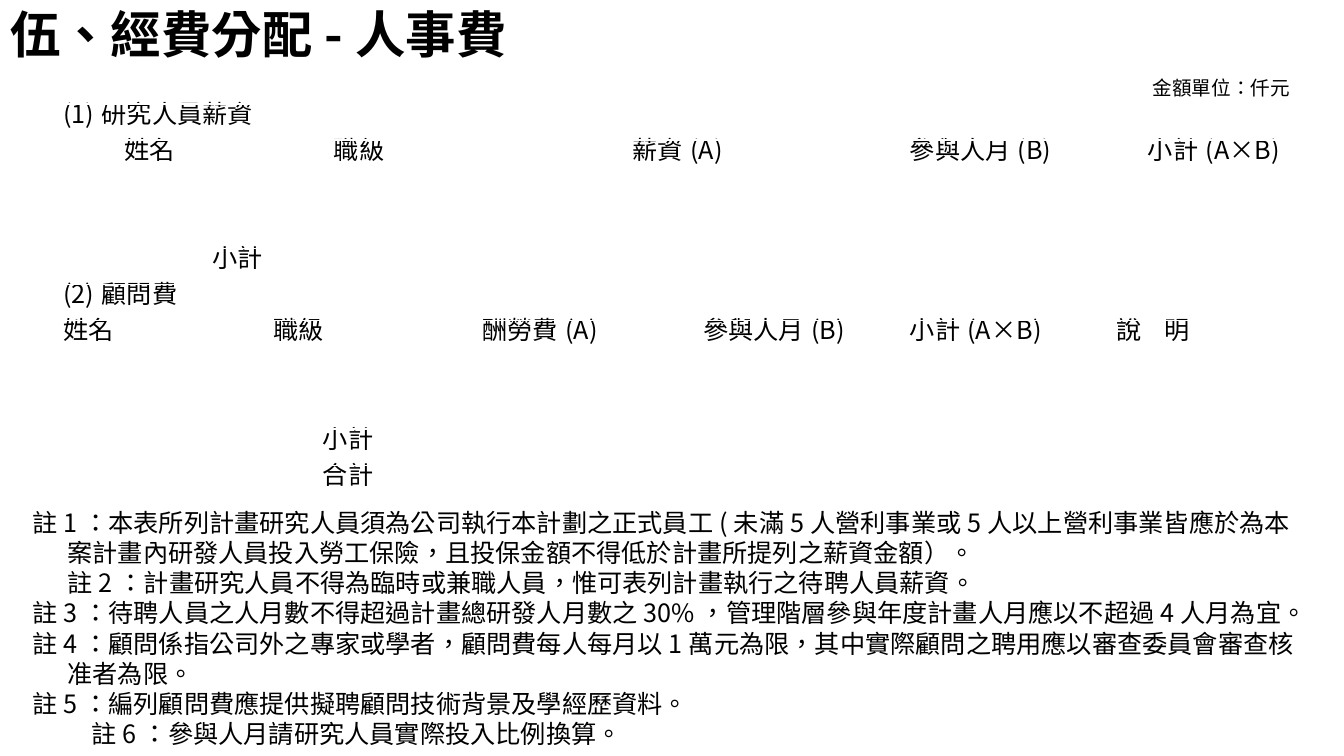
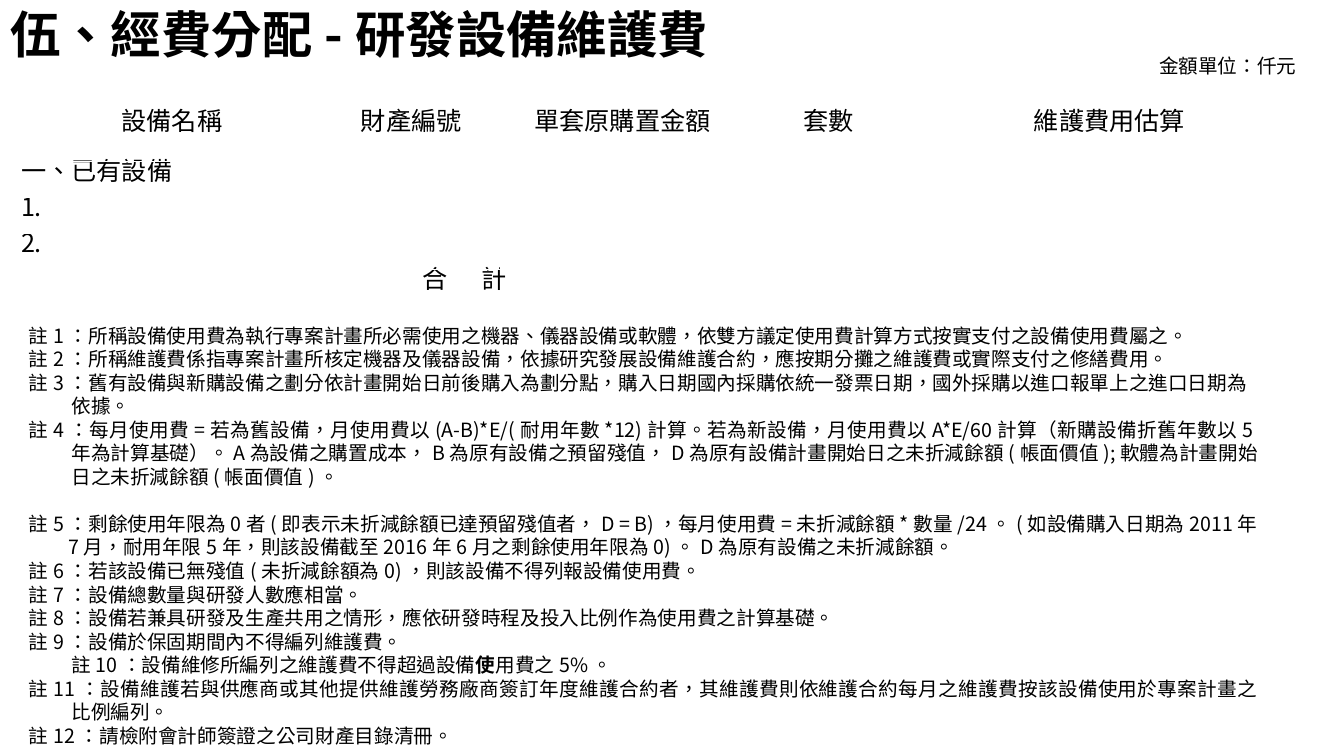
from dataclasses import dataclass

from pptx import Presentation
from pptx.dml.color import RGBColor
from pptx.enum.lang import MSO_LANGUAGE_ID as Language
from pptx.enum.text import MSO_ANCHOR as Anchor, MSO_AUTO_SIZE as AutoSize, PP_ALIGN as Align
from pptx.oxml.ns import qn
from pptx.util import Cm, Pt


@dataclass
class Span:
    """Piece of text with its own weight or letter spacing in points."""
    text: str
    bold: bool = False
    gap: int = 0


@dataclass
class Form:
    """Paragraph layout, with indents in cm and spacing in points."""
    align: Align = Align.LEFT
    indent: float = 0
    hang: float = 0
    before: float = 0


class Budget:
    """Style of the budget deck and the slide being filled."""
    colours = {"text": "000000", "page": "FFFFFF"}
    font = "Noto Sans CJK SC"
    row_height = 0.91

    def __init__(self):
        """Start an empty widescreen deck."""
        self.deck = Presentation()
        self.deck.slide_width, self.deck.slide_height = Cm(33.87), Cm(19.05)
        self.page = None

    def fill_para(self, para, spans, size, form=Form(), bold=False):
        """Format a paragraph and add its text run by run."""
        para.alignment = form.align
        properties = para._p.get_or_add_pPr()
        properties.set("marL", str(Cm(form.indent)))
        properties.set("indent", str(-Cm(form.hang)))
        para.space_before = Pt(form.before)
        for span in [Span(spans, bold)] if isinstance(spans, str) else spans:
            run = para.add_run()
            run.text = span.text
            font = run.font
            font.name, font.size, font.bold = self.font, Pt(size), span.bold
            font.color.rgb = RGBColor.from_string(self.colours["text"])
            font.language_id = Language.TRADITIONAL_CHINESE
            if span.gap:
                font._element.set("spc", str(span.gap * 100))
            latin = font._element.find(qn("a:latin"))
            east_asian = font._element.makeelement(qn("a:ea"), {"typeface": self.font})
            latin.addnext(east_asian)

    def add_page(self, title):
        """Add a slide with its title."""
        self.page = self.deck.slides.add_slide(self.deck.slide_layouts[5])
        fill = self.page.background.fill
        fill.solid()
        fill.fore_color.rgb = RGBColor.from_string(self.colours["page"])
        box = self.page.shapes.title
        box.left, box.top, box.width, box.height = Cm(0), Cm(0), Cm(29.21), Cm(1.78)
        frame = box.text_frame
        frame.auto_size, frame.vertical_anchor = AutoSize.NONE, Anchor.MIDDLE
        para = frame.paragraphs[0]
        self.fill_para(para, title, 36, bold=True)
        para.line_spacing = Pt(40)

    def add_text(self, left, top, width, height, lines, size):
        """Add a wrapping text box from pairs of text and form."""
        box = self.page.shapes.add_textbox(Cm(left), Cm(top), Cm(width), Cm(height))
        frame = box.text_frame
        frame.word_wrap, frame.auto_size = True, AutoSize.SHAPE_TO_FIT_TEXT
        for number, (spans, form) in enumerate(lines):
            para = frame.add_paragraph() if number else frame.paragraphs[0]
            self.fill_para(para, spans, size, form)

    def add_unit(self, left, top):
        """Add the note on the currency unit."""
        self.add_text(left, top, 4.65, 0.86, [("金額單位：仟元", Form())], 14)

    def add_table(self, left, top, widths, heights, merges, entries):
        """Add a plain table; entries are row, column, text and form."""
        frame = self.page.shapes.add_table(
            len(heights), len(widths), Cm(left), Cm(top), Cm(sum(widths)), Cm(sum(heights)))
        table = frame.table
        table.first_row = table.horz_banding = False
        for column, width in zip(table.columns, widths):
            column.width = Cm(width)
        for row, height in zip(table.rows, heights):
            row.height = Cm(height)
        for cell in table.iter_cells():
            cell.fill.background()
            cell.margin_left = cell.margin_right = Cm(0.05)
            cell.margin_top = cell.margin_bottom = Cm(0)
            cell.vertical_anchor = Anchor.MIDDLE
            cell.text_frame.paragraphs[0].line_spacing = Pt(12)
        for row, first, last in merges:
            table.cell(row, first).merge(table.cell(row, last))
        for row, column, spans, form in entries:
            self.fill_para(table.cell(row, column).text_frame.paragraphs[0], spans, 18, form)


def add_staff_page(budget):
    """Build the slide on personnel costs."""
    left = Form(indent=0.84)
    centred = Form(Align.CENTER, 0.84)
    total = Form(Align.CENTER, 0.2, 0.2)
    remark = [Span("說"), Span(" ", gap=12), Span("明")]
    consultant_heads = ["姓名", "職級", "酬勞費(A)", "參與人月(B)", "小計(A×B)", remark]
    entries = [
        (0, 0, "(1)研究人員薪資", left),
        (1, 0, "姓名", centred),
        (1, 1, "職級", centred),
        (1, 2, "薪資(A)", centred),
        (1, 4, "參與人月(B)", left),
        (1, 5, "小計(A×B)", centred),
        (4, 0, "小計", total),
        (5, 0, "(2)顧問費", Form(Align.JUSTIFY, 0.84)),
        (9, 0, "小計", total),
        (10, 0, "合計", total),
    ]
    entries += [(6, column, head, left) for column, head in enumerate(consultant_heads)]
    merges = [(0, 0, 5), (4, 0, 1), (5, 0, 5), (9, 0, 2), (10, 0, 2)]
    merges += [(row, 2, 3) for row in range(1, 5)]
    hanging = Form(indent=0.89, hang=0.89)
    notes = [
        ("註1：本表所列計畫研究人員須為公司執行本計劃之正式員工(未滿5人營利事業或5人以上營利事業皆應於為本案計畫內研發人員投入勞工保險，且投保金額不得低於計畫所提列之薪資金額）。", hanging),
        ("註2：計畫研究人員不得為臨時或兼職人員，惟可表列計畫執行之待聘人員薪資。", Form(indent=0.89)),
        ("註3：待聘人員之人月數不得超過計畫總研發人月數之30%，管理階層參與年度計畫人月應以不超過4人月為宜。", hanging),
        ("註4：顧問係指公司外之專家或學者，顧問費每人每月以1萬元為限，其中實際顧問之聘用應以審查委員會審查核准者為限。", hanging),
        ("註5：編列顧問費應提供擬聘顧問技術背景及學經歷資料。", Form(indent=1.5, hang=1.5)),
        ("註6：參與人月請研究人員實際投入比例換算。", Form(Align.JUSTIFY, 1.5)),
    ]
    budget.add_page("伍、經費分配-人事費")
    budget.add_unit(28.8, 1.78)
    budget.add_table(0.71, 2.62, [5.28, 5.28, 5.56, 5.21, 5.21, 5.84],
                     [budget.row_height] * 11, merges, entries)
    budget.add_text(0.56, 12.65, 32.77, 6.4, notes, 18)


def add_equipment_page(budget):
    """Build the slide on equipment maintenance costs."""
    centred = Form(Align.CENTER)
    justified = Form(Align.JUSTIFY)
    heads = ["設備名稱", "財產編號", "單套原購置金額", "套數", "維護費用估算"]
    entries = [(0, column, head, centred) for column, head in enumerate(heads)]
    entries += [(row, 0, label, justified)
                for row, label in enumerate(["一、已有設備", "1.", "2."], 1)]
    total = [Span("合"), Span(" ", gap=20), Span("計")]
    entries.append((4, 0, total, Form(Align.CENTER, 0.84, 0.84)))
    hanging = Form(indent=1.07, hang=1.07)
    even = Form(Align.JUSTIFY, 1.07, 1.07)
    notes = [
        ("註1：所稱設備使用費為執行專案計畫所必需使用之機器、儀器設備或軟體，依雙方議定使用費計算方式按實支付之設備使用費屬之。", hanging),
        ("註2：所稱維護費係指專案計畫所核定機器及儀器設備，依據研究發展設備維護合約，應按期分攤之維護費或實際支付之修繕費用。", hanging),
        ("註3：舊有設備與新購設備之劃分依計畫開始日前後購入為劃分點，購入日期國內採購依統一發票日期，國外採購以進口報單上之進口日期為依據。", hanging),
        ("註4：每月使用費=若為舊設備，月使用費以(A-B)*E/(耐用年數*12)計算。若為新設備，月使用費以A*E/60計算（新購設備折舊年數以5年為計算基礎）。A為設備之購置成本，B為原有設備之預留殘值，D為原有設備計畫開始日之未折減餘額(帳面價值);軟體為計畫開始日之未折減餘額(帳面價值)。", even),
        ("註5：剩餘使用年限為0者(即表示未折減餘額已達預留殘值者，D = B)，每月使用費=未折減餘額*數量/24。(如設備購入日期為2011年7月，耐用年限5年，則該設備截至2016年6月之剩餘使用年限為0)。D為原有設備之未折減餘額。", Form(Align.JUSTIFY, 0.99, 0.99, 16.8)),
        ("註6：若該設備已無殘值(未折減餘額為0)，則該設備不得列報設備使用費。", Form(Align.JUSTIFY, 0.99, 0.99)),
        ("註7：設備總數量與研發人數應相當。", hanging),
        ("註8：設備若兼具研發及生產共用之情形，應依研發時程及投入比例作為使用費之計算基礎。", hanging),
        ("註9：設備於保固期間內不得編列維護費。", hanging),
        ([Span("註10：設備維修所編列之維護費不得超過設備"), Span("使", True), Span("用費之5%。")], Form(indent=1.07)),
        ("註11：設備維護若與供應商或其他提供維護勞務廠商簽訂年度維護合約者，其維護費則依維護合約每月之維護費按該設備使用於專案計畫之比例編列。", even),
        ("註12：請檢附會計師簽證之公司財產目錄清冊。", even),
    ]
    budget.add_page("伍、經費分配-研發設備維護費")
    budget.add_unit(28.96, 1.24)
    budget.add_table(0.48, 2.46, [7.7, 4.37, 6.27, 4.11, 10.06],
                     [1.6] + [budget.row_height] * 4, [(1, 0, 4), (4, 0, 3)], entries)
    budget.add_text(0.48, 8.03, 31.47, 11.02, notes, 14)


def main():
    """Build and save the deck."""
    budget = Budget()
    add_staff_page(budget)
    add_equipment_page(budget)
    budget.deck.save("out.pptx")


if __name__ == "__main__":
    main()
